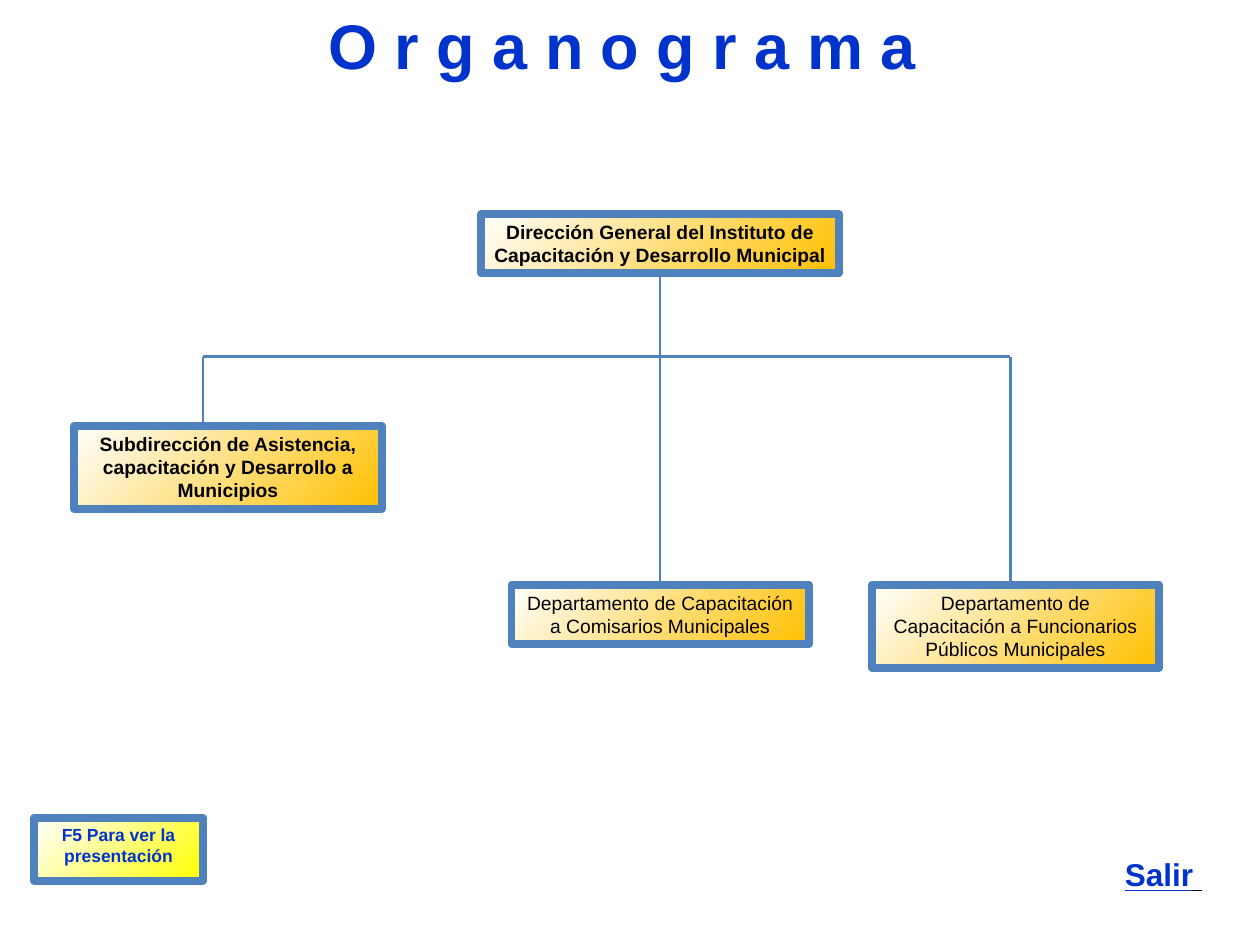
"""Build the organisation chart slide."""
from pptx import Presentation
from pptx.dml.color import RGBColor
from pptx.enum.shapes import MSO_CONNECTOR, MSO_SHAPE
from pptx.enum.text import MSO_ANCHOR, MSO_AUTO_SIZE, PP_ALIGN
from pptx.oxml.ns import qn
from pptx.util import Inches, Pt

RECT = MSO_SHAPE.RECTANGLE
STRAIGHT = MSO_CONNECTOR.STRAIGHT
TOP = MSO_ANCHOR.TOP
GROW = MSO_AUTO_SIZE.SHAPE_TO_FIT_TEXT
LEFT, CENTER = PP_ALIGN.LEFT, PP_ALIGN.CENTER
BLUE, STEEL, GOLD, YELLOW = "0033CC", "4F81BD", "FFC000", "FFFF00"
BLACK, WHITE = "000000", "FFFFFF"


def color(code):
    return RGBColor.from_string(code)


def write(shape, runs, size, bold, align=CENTER, wrap=True):
    frame = shape.text_frame
    frame.word_wrap = wrap
    frame.auto_size = GROW
    frame.vertical_anchor = TOP
    para = frame.paragraphs[0]
    para.alignment = align
    for text, code in runs:
        run = para.add_run()
        run.text = text
        run.font.name = "Arial"
        run.font.size = Pt(size)
        run.font.bold = bold
        run.font.color.rgb = color(code)
    return para


prs = Presentation()
prs.slide_width, prs.slide_height = Inches(10), Inches(7.5)
slide = prs.slides.add_slide(prs.slide_layouts[5])
shapes = slide.shapes

title = shapes.title
title.left, title.top = Inches(2.5), Inches(0)
title.width, title.height = Inches(4.88), Inches(0.71)
write(title, [("O r g a n o g r a m a", BLUE)], 36, True)

boxes = {
    "head": (3.82, 1.7, 2.84, 0.47, GOLD, BLACK, 11, True,
             "Dirección General del Instituto de Capacitación y Desarrollo Municipal"),
    "sub": (0.59, 3.38, 2.44, 0.66, GOLD, BLACK, 11, True,
            "Subdirección de Asistencia, capacitación y Desarrollo a Municipios"),
    "local": (4.06, 4.64, 2.36, 0.47, GOLD, BLACK, 11, False,
              "Departamento de Capacitación a Comisarios Municipales"),
    "staff": (6.92, 4.64, 2.28, 0.66, GOLD, BLACK, 11, False,
              "Departamento de Capacitación a Funcionarios Públicos Municipales"),
    "hint": (0.27, 6.49, 1.34, 0.5, YELLOW, BLUE, 10, True,
             "F5 Para ver la presentación"),
}
made = {}
for name, (x, y, w, h, tint, ink, size, bold, text) in boxes.items():
    box = shapes.add_shape(RECT, Inches(x), Inches(y), Inches(w), Inches(h))
    box.shadow.inherit = False
    box.fill.gradient()
    box.fill.gradient_angle = 315
    for stop, code in zip(box.fill.gradient_stops, (WHITE, tint)):
        stop.color.rgb = color(code)
    box.line.color.rgb = color(STEEL)
    box.line.width = Pt(4.5)
    write(box, [(text, ink)], size, bold)
    made[name] = box

bus, west, mid, east = 2.83, 1.61, 5.24, 8.02
lines = [
    (west, bus, east, bus, None, None),
    (mid, 2.17, mid, bus, "head", None),
    (west, bus, west, 3.38, None, None),
    (mid, bus, mid, 4.64, None, "local"),
    (east, bus, east, 4.64, None, None),
]
for x1, y1, x2, y2, start, end in lines:
    line = shapes.add_connector(
        STRAIGHT, Inches(x1), Inches(y1), Inches(x2), Inches(y2))
    if start:
        line.begin_connect(made[start], 2)
    if end:
        line.end_connect(made[end], 0)
    line.line.color.rgb = color(STEEL)
    line.line.width = Pt(1.25)
    props = line._element.spPr
    props.append(props.makeelement(qn("a:effectLst"), {}))

leave = shapes.add_textbox(Inches(8.83), Inches(6.74), Inches(0.81), Inches(0.4))
para = write(leave, [("Salir", BLUE), (" ", BLACK)], 18, True, LEFT, False)
for run in para.runs:
    run.font.underline = True

prs.save("out.pptx")
